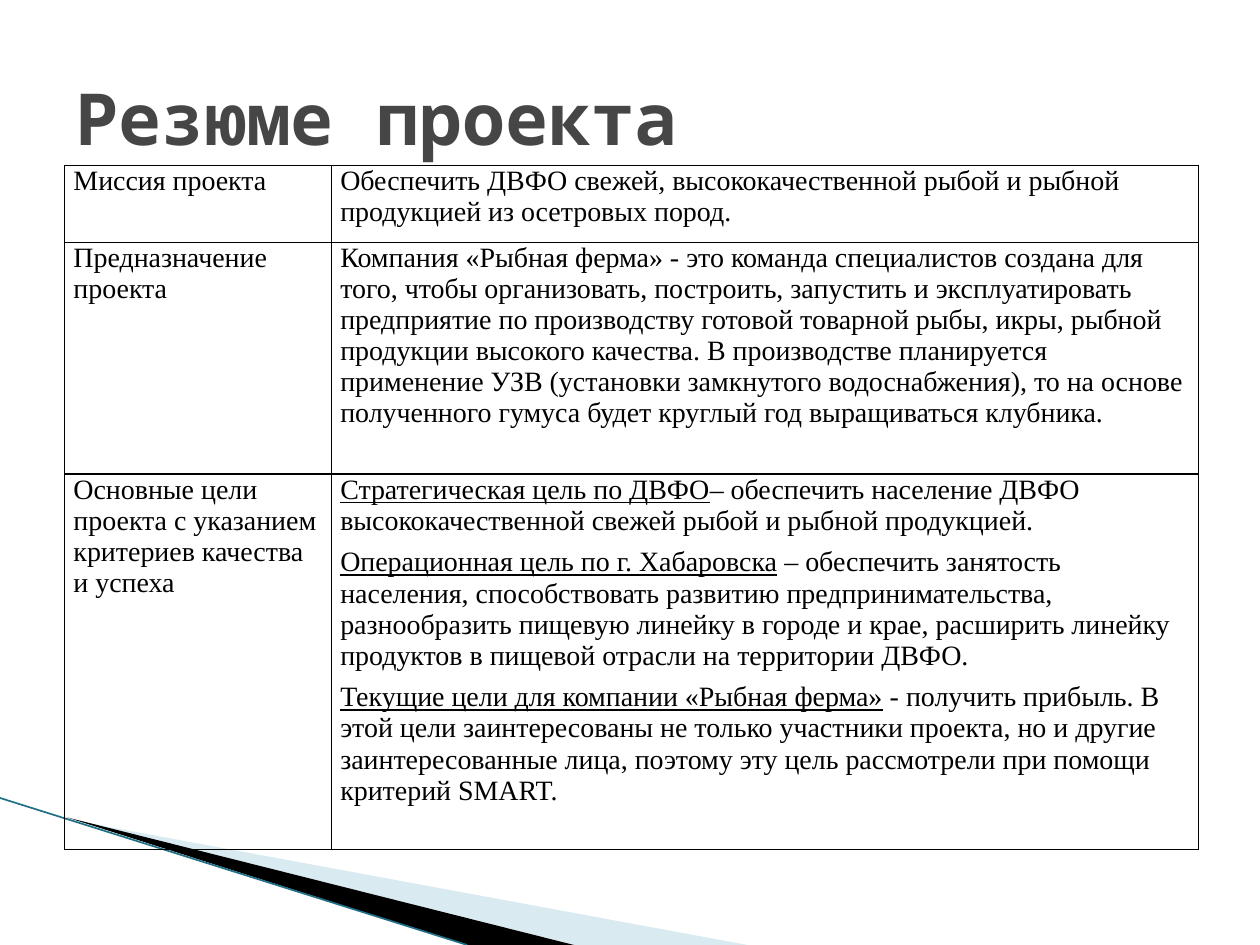
from dataclasses import dataclass
from typing import Optional

from lxml.etree import SubElement
from pptx import Presentation
from pptx.dml.color import RGBColor as Rgb
from pptx.enum.shapes import MSO_CONNECTOR as Connector
from pptx.enum.text import MSO_ANCHOR as Anchor
from pptx.oxml.ns import qn
from pptx.util import Pt

COLORS = {
    "title": "464646",
    "ink": "000000",
    "pale": "A0CBDC",
    "stripe": "1F7086",
}
TITLE_FONT = "Noto Sans Mono"
BODY_FONT = "Times New Roman"
COLUMN_WIDTHS = (152.5, 495.5)


@dataclass(frozen=True)
class Wedge:
    points: tuple
    color: str
    opacity: Optional[int] = None


@dataclass(frozen=True)
class Entry:
    text: str
    lead: str = ""


@dataclass(frozen=True)
class Row:
    height: float
    label: str
    entries: tuple


WEDGES = (
    Wedge(((40, 468.5), (427, 540), (328, 540)), "pale", 40),
    Wedge(((38, 467), (328, 540), (267, 540)), "ink"),
)

ROWS = (
    Row(44, "Миссия проекта", (
        Entry("Обеспечить ДВФО свежей, высококачественной рыбой и рыбной "
              "продукцией из осетровых пород."),
    )),
    Row(132.5, "Предназначение проекта", (
        Entry("Компания «Рыбная ферма» - это команда специалистов создана для "
              "того, чтобы организовать, построить, запустить и эксплуатировать "
              "предприятие по производству готовой товарной рыбы, икры, рыбной "
              "продукции высокого качества. В производстве планируется "
              "применение УЗВ (установки замкнутого водоснабжения), то на основе "
              "полученного гумуса будет круглый год выращиваться клубника."),
    )),
    Row(214.5, "Основные цели проекта с указанием критериев качества и успеха", (
        Entry("– обеспечить население ДВФО высококачественной свежей рыбой и "
              "рыбной продукцией.",
              "Стратегическая цель по ДВФО"),
        Entry(" – обеспечить занятость населения, способствовать развитию "
              "предпринимательства, разнообразить пищевую линейку в городе и "
              "крае, расширить линейку продуктов в пищевой отрасли на "
              "территории ДВФО.",
              "Операционная цель по г. Хабаровска"),
        Entry(" - получить прибыль. В этой цели заинтересованы не только "
              "участники проекта, но и другие заинтересованные лица, поэтому "
              "эту цель рассмотрели при помощи критерий SMART.",
              "Текущие цели для компании «Рыбная ферма»"),
    )),
)


def color(name: str) -> Rgb:
    return Rgb.from_string(COLORS[name])


def set_font(para, name: str, size: float, tint: str, bold: bool = False) -> None:
    font = para.font
    font.name = name
    font.size = Pt(size)
    font.bold = bold
    font.color.rgb = color(tint)


def draw_wedge(page, wedge: Wedge) -> None:
    first, *rest = [(Pt(x), Pt(y)) for x, y in wedge.points]
    builder = page.shapes.build_freeform(*first)
    builder.add_line_segments(rest, close=True)
    shape = builder.convert_to_shape()
    shape.shadow.inherit = False
    shape.line.fill.background()
    shape.fill.solid()
    shape.fill.fore_color.rgb = color(wedge.color)
    if wedge.opacity is not None:
        tint = shape.fill._xPr.find(".//" + qn("a:srgbClr"))
        SubElement(tint, qn("a:alpha"), val=str(wedge.opacity * 1000))


def draw_stripe(page) -> None:
    stripe = page.shapes.add_connector(
        Connector.STRAIGHT, Pt(0), Pt(456), Pt(267), Pt(540))
    stripe.line.color.rgb = color("stripe")
    stripe.line.width = Pt(0.95)
    SubElement(stripe._element.spPr, qn("a:effectLst"))


def draw_title(page, text: str) -> None:
    box = page.shapes.add_textbox(Pt(36), Pt(21.5), Pt(648), Pt(90))
    frame = box.text_frame
    frame.word_wrap = True
    frame.vertical_anchor = Anchor.MIDDLE
    para = frame.paragraphs[0]
    para.text = text
    set_font(para, TITLE_FONT, 41, "title", bold=True)


def add_borders(cell) -> None:
    properties = cell._tc.get_or_add_tcPr()
    for position, side in enumerate(("lnL", "lnR", "lnT", "lnB")):
        border = SubElement(properties, qn(f"a:{side}"), w=str(Pt(1)))
        fill = SubElement(border, qn("a:solidFill"))
        SubElement(fill, qn("a:srgbClr"), val=COLORS["ink"])
        properties.insert(position, border)


def fill_cell(cell, entries: tuple) -> None:
    cell.fill.background()
    cell.margin_left = cell.margin_right = Pt(5)
    cell.margin_top = cell.margin_bottom = Pt(0)
    add_borders(cell)
    frame = cell.text_frame
    for index, entry in enumerate(entries):
        para = frame.add_paragraph() if index else frame.paragraphs[0]
        para.space_after = Pt(6)
        set_font(para, BODY_FONT, 16, "ink")
        if entry.lead:
            span = para.add_run()
            span.text = entry.lead
            span.font.underline = True
        para.add_run().text = entry.text


def draw_table(page) -> None:
    table = page.shapes.add_table(
        len(ROWS), len(COLUMN_WIDTHS), Pt(37), Pt(94.5),
        Pt(sum(COLUMN_WIDTHS)), Pt(sum(row.height for row in ROWS))).table
    table.first_row = table.horz_banding = False
    for column, width in zip(table.columns, COLUMN_WIDTHS):
        column.width = Pt(width)
    for index, row in enumerate(ROWS):
        table.rows[index].height = Pt(row.height)
        fill_cell(table.cell(index, 0), (Entry(row.label),))
        fill_cell(table.cell(index, 1), row.entries)


def main() -> None:
    deck = Presentation()
    deck.slide_width, deck.slide_height = Pt(720), Pt(540)
    page = deck.slides.add_slide(deck.slide_layouts[6])
    for wedge in WEDGES:
        draw_wedge(page, wedge)
    draw_stripe(page)
    draw_table(page)
    draw_title(page, "Резюме проекта")
    deck.save("out.pptx")


if __name__ == "__main__":
    main()
